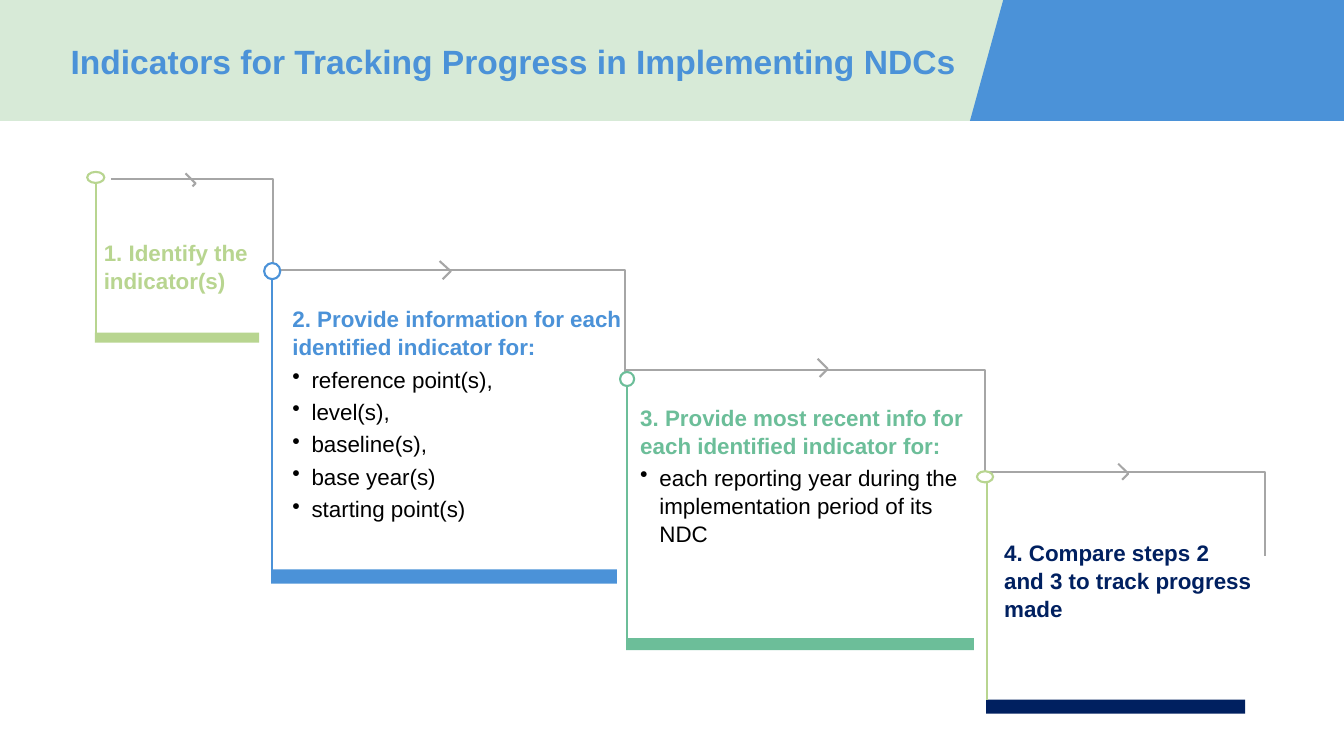
from lxml import etree
from pptx import Presentation
from pptx.dml.color import RGBColor
from pptx.enum.shapes import MSO_CONNECTOR as Connector, MSO_SHAPE as Shape
from pptx.enum.text import MSO_ANCHOR as Anchor
from pptx.oxml.ns import qn
from pptx.util import Inches, Pt

COLORS = {
    "mint": "D7EAD7", "blue": "4B92D8", "lime": "B8D590", "green": "6CBE99",
    "navy": "002060", "gray": "A6A6A6", "white": "FFFFFF", "black": "000000",
}

# box, bar: left, top, width, height; ring: centre x, centre y, width, height
# arrow: path to the next step, then the chevron on it
STEPS = [
    {"title": "1. Identify the indicator(s)", "bullets": [],
     "color": "lime", "line": "lime",
     "box": (1.03, 2.38, 1.57, 0.59), "bar": (0.94, 3.3, 1.63, 0.1),
     "ring": (0.95, 1.76, 0.17, 0.11),
     "arrow": [[(1.1, 1.78), (2.71, 1.78), (2.71, 2.63)],
               [(1.84, 1.72), (1.94, 1.82), (1.91, 1.85)]]},
    {"title": "2. Provide information for each identified indicator for:",
     "bullets": ["reference point(s),", "level(s),", "baseline(s),",
                 "base year(s)", "starting point(s)"],
     "color": "blue", "line": "blue",
     "box": (2.9, 3.08, 3.32, 2.15), "bar": (2.69, 5.65, 3.43, 0.14),
     "ring": (2.7, 2.69, 0.16, 0.16),
     "arrow": [[(2.64, 2.68), (6.2, 2.68), (6.2, 3.69)],
               [(4.36, 2.59), (4.47, 2.69), (4.39, 2.77)]]},
    {"title": "3. Provide most recent info for each identified indicator for:",
     "bullets": ["each reporting year during the implementation period of its NDC"],
     "color": "green", "line": "green",
     "box": (6.35, 4.03, 3.28, 1.45), "bar": (6.21, 6.33, 3.45, 0.12),
     "ring": (6.22, 3.76, 0.14, 0.14),
     "arrow": [[(6.21, 3.67), (9.77, 3.67), (9.77, 4.68)],
               [(8.11, 3.56), (8.21, 3.66), (8.13, 3.74)]]},
    {"title": "4. Compare steps 2 and 3 to track progress made", "bullets": [],
     "color": "navy", "line": "lime",
     "box": (9.96, 5.36, 2.47, 0.86), "bar": (9.78, 6.94, 2.57, 0.14),
     "ring": (9.77, 4.73, 0.16, 0.11),
     "arrow": [[(9.79, 4.68), (12.55, 4.68), (12.55, 5.52)],
               [(11.09, 4.6), (11.19, 4.7), (11.13, 4.76)]]},
]


def paint(shape, fill=None, line=None):
    """Set fill and outline by colour name; None leaves either one out."""
    shape.shadow.inherit = False
    if fill:
        shape.fill.solid()
        shape.fill.fore_color.rgb = RGBColor.from_string(COLORS[fill])
    else:
        shape.fill.background()
    if line:
        shape.line.color.rgb = RGBColor.from_string(COLORS[line])
        shape.line.width = Pt(1.5)
    else:
        shape.line.fill.background()


def style(paragraph, size, color, bold):
    font = paragraph.font
    font.name, font.size, font.bold = "Arial", Pt(size), bold
    font.color.rgb = RGBColor.from_string(COLORS[color])


deck = Presentation()
deck.slide_width, deck.slide_height = Inches(13.33), Inches(7.5)
page = deck.slides.add_slide(deck.slide_layouts[6])
shapes = page.shapes

# Header
band = shapes.add_shape(Shape.RECTANGLE, 0, 0, deck.slide_width, Inches(1.2))
paint(band, fill="mint")
outline = shapes.build_freeform(Inches(13.33), Inches(1.2))
outline.add_line_segments(
    [(Inches(x), Inches(y)) for x, y in [(9.62, 1.2), (9.95, 0), (13.33, 0)]])
paint(outline.convert_to_shape(), fill="blue")

heading = shapes.add_textbox(Inches(0.7), Inches(0.33), Inches(8.9), Inches(0.61))
frame = heading.text_frame
frame.word_wrap = True
frame.vertical_anchor = Anchor.MIDDLE
frame.margin_left = frame.margin_top = frame.margin_right = frame.margin_bottom = 0
para = frame.paragraphs[0]
para.text = "Indicators for Tracking Progress in Implementing NDCs"
para.line_spacing = 0.9
style(para, 24, "blue", True)

# Arrows between the steps
for step in STEPS:
    for points in step["arrow"]:
        corners = [(Inches(x), Inches(y)) for x, y in points]
        outline = shapes.build_freeform(*corners[0])
        outline.add_line_segments(corners[1:], close=False)
        paint(outline.convert_to_shape(), line="gray")

# Steps
for step in STEPS:
    box = shapes.add_textbox(*map(Inches, step["box"]))
    frame = box.text_frame
    frame.word_wrap = True
    frame.vertical_anchor = Anchor.BOTTOM
    frame.margin_left = frame.margin_top = frame.margin_right = 0
    frame.margin_bottom = Inches(0.05)
    para = frame.paragraphs[0]
    para.text = step["title"]
    style(para, 16, step["color"], True)
    for bullet in step["bullets"]:
        para = frame.add_paragraph()
        para.text = bullet
        properties = para._p.get_or_add_pPr()
        properties.set("marL", str(Inches(0.19)))
        properties.set("indent", str(Inches(-0.19)))
        etree.SubElement(properties, qn("a:buChar")).set("char", "•")
        style(para, 16, "black", False)
    for para in frame.paragraphs:
        para.line_spacing = 1.05
        para.space_after = Pt(3)

    bar = shapes.add_shape(Shape.RECTANGLE, *map(Inches, step["bar"]))
    paint(bar, fill=step["color"])

    bar_left, bar_top = step["bar"][:2]
    x, y, width, height = step["ring"]
    stem_x = Inches(bar_left + 0.01)
    stem = shapes.add_connector(Connector.STRAIGHT, stem_x, Inches(bar_top),
                                stem_x, Inches(y + height / 2))
    stem.line.color.rgb = RGBColor.from_string(COLORS[step["line"]])
    stem.line.width = Pt(1.5)
    etree.SubElement(stem._element.spPr, qn("a:effectLst"))

    ring = shapes.add_shape(Shape.OVAL, Inches(x - width / 2), Inches(y - height / 2),
                            Inches(width), Inches(height))
    paint(ring, fill="white", line=step["line"])

deck.save("out.pptx")
